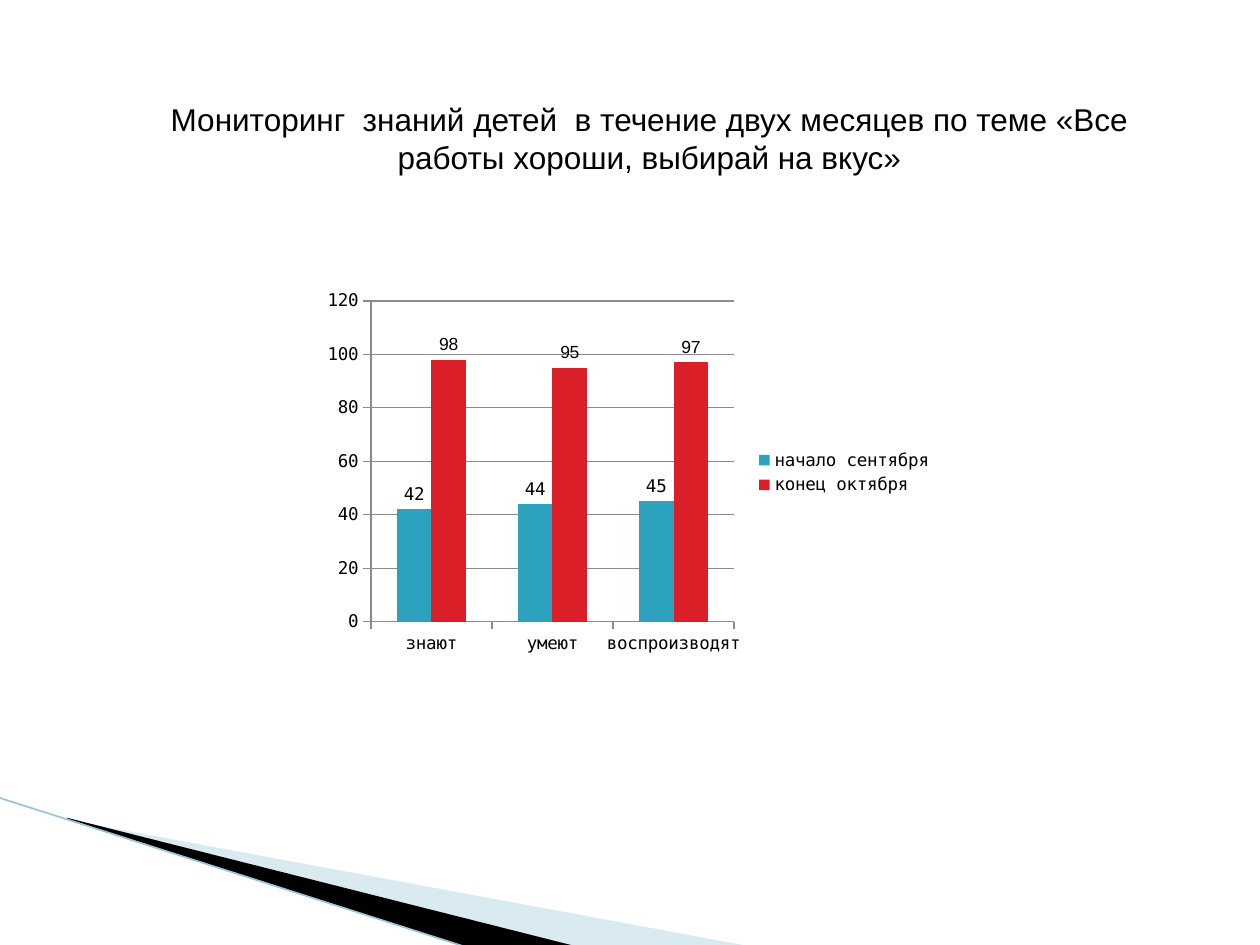
from pptx import Presentation
from pptx.chart.data import CategoryChartData
from pptx.dml.color import RGBColor
from pptx.enum.chart import (XL_CHART_TYPE, XL_LABEL_POSITION,
                             XL_LEGEND_POSITION, XL_TICK_MARK)
from pptx.enum.shapes import MSO_CONNECTOR
from pptx.enum.text import MSO_ANCHOR, PP_ALIGN
from pptx.oxml.xmlchemy import OxmlElement
from pptx.util import Inches, Pt


def rgb(code):
    return RGBColor.from_string(code)


class Deck:
    ink = "000000"
    rule = "8B8B8B"
    font = "Arial"
    mono = "DejaVu Sans Mono"

    def __init__(self):
        self.prs = Presentation()
        self.prs.slide_width, self.prs.slide_height = Inches(10), Inches(7.5)
        self.slide = self.prs.slides.add_slide(self.prs.slide_layouts[5])

    def style(self, font, size, name):
        font.size, font.name = Pt(size), name
        font.color.rgb = rgb(self.ink)

    def title(self, text, *box):
        shape = self.slide.shapes.title
        shape.left, shape.top, shape.width, shape.height = map(Inches, box)
        frame = shape.text_frame
        frame.text = text
        frame.word_wrap = True
        frame.vertical_anchor = MSO_ANCHOR.MIDDLE
        para = frame.paragraphs[0]
        para.alignment = PP_ALIGN.CENTER
        self.style(para.font, 18, self.font)

    def wedge(self, points, color, alpha=None):
        """Draw a filled outline; alpha is its opacity in percent."""
        first, *rest = [(Inches(x), Inches(y)) for x, y in points]
        pen = self.slide.shapes.build_freeform(*first)
        pen.add_line_segments(rest)
        shape = pen.convert_to_shape()
        shape.shadow.inherit = False
        shape.line.fill.background()
        shape.fill.solid()
        shape.fill.fore_color.rgb = rgb(color)
        if alpha:
            node = OxmlElement("a:alpha")
            node.set("val", str(alpha * 1000))
            shape.fill._xPr.solidFill[0].append(node)

    def line(self, start, end, color, width):
        link = self.slide.shapes.add_connector(
            MSO_CONNECTOR.STRAIGHT, *map(Inches, start + end))
        link.line.color.rgb = rgb(color)
        link.line.width = Pt(width)
        link._element.spPr.append(OxmlElement("a:effectLst"))

    def chart(self, cats, rows, *box):
        """Draw clustered columns; rows hold name, values, fill, label font."""
        data = CategoryChartData()
        data.categories = cats
        for name, vals, _, _ in rows:
            data.add_series(name, vals)
        chart = self.slide.shapes.add_chart(
            XL_CHART_TYPE.COLUMN_CLUSTERED, *map(Inches, box), data).chart
        self.style(chart.font, 10, self.mono)
        chart.has_title = False
        chart.has_legend = True
        chart.legend.position = XL_LEGEND_POSITION.RIGHT
        chart.legend.include_in_layout = False

        grid = chart.value_axis.major_gridlines
        for axis in (chart.category_axis, chart.value_axis):
            axis.major_tick_mark = XL_TICK_MARK.OUTSIDE
        for part in (chart.category_axis, chart.value_axis, grid):
            part.format.line.color.rgb = rgb(self.rule)
            part.format.line.width = Pt(0.75)

        plot = chart.plots[0]
        plot.vary_by_categories = False
        plot.gap_width, plot.overlap = 150, 0
        for series, (_, _, color, font) in zip(plot.series, rows):
            series.format.fill.solid()
            series.format.fill.fore_color.rgb = rgb(color)
            labels = series.data_labels
            labels.show_value = True
            labels.position = XL_LABEL_POSITION.OUTSIDE_END
            self.style(labels.font, 10, font)


def main():
    deck = Deck()
    deck.wedge([(0.55, 6.51), (5.95, 7.51), (4.56, 7.51), (0.55, 6.5)],
               "A0CBDC", 40)
    deck.wedge([(0.53, 6.49), (4.57, 7.51), (3.72, 7.52), (0.54, 6.5)],
               deck.ink)
    deck.line((-0.01, 6.33), (3.71, 7.52), "97C5D8", 0.95)
    deck.title("Мониторинг  знаний детей  в течение двух месяцев по теме "
               "«Все работы хороши, выбирай на вкус»", 1.22, 0.74, 7.87, 0.71)
    deck.chart(["знают", "умеют", "воспроизводят"],
               [("начало сентября", (42, 44, 45), "2DA2BF", deck.mono),
                ("конец октября", (98, 95, 97), "DA1F28", deck.font)],
               2.5, 2.25, 5, 3)
    deck.prs.save("out.pptx")


if __name__ == "__main__":
    main()
